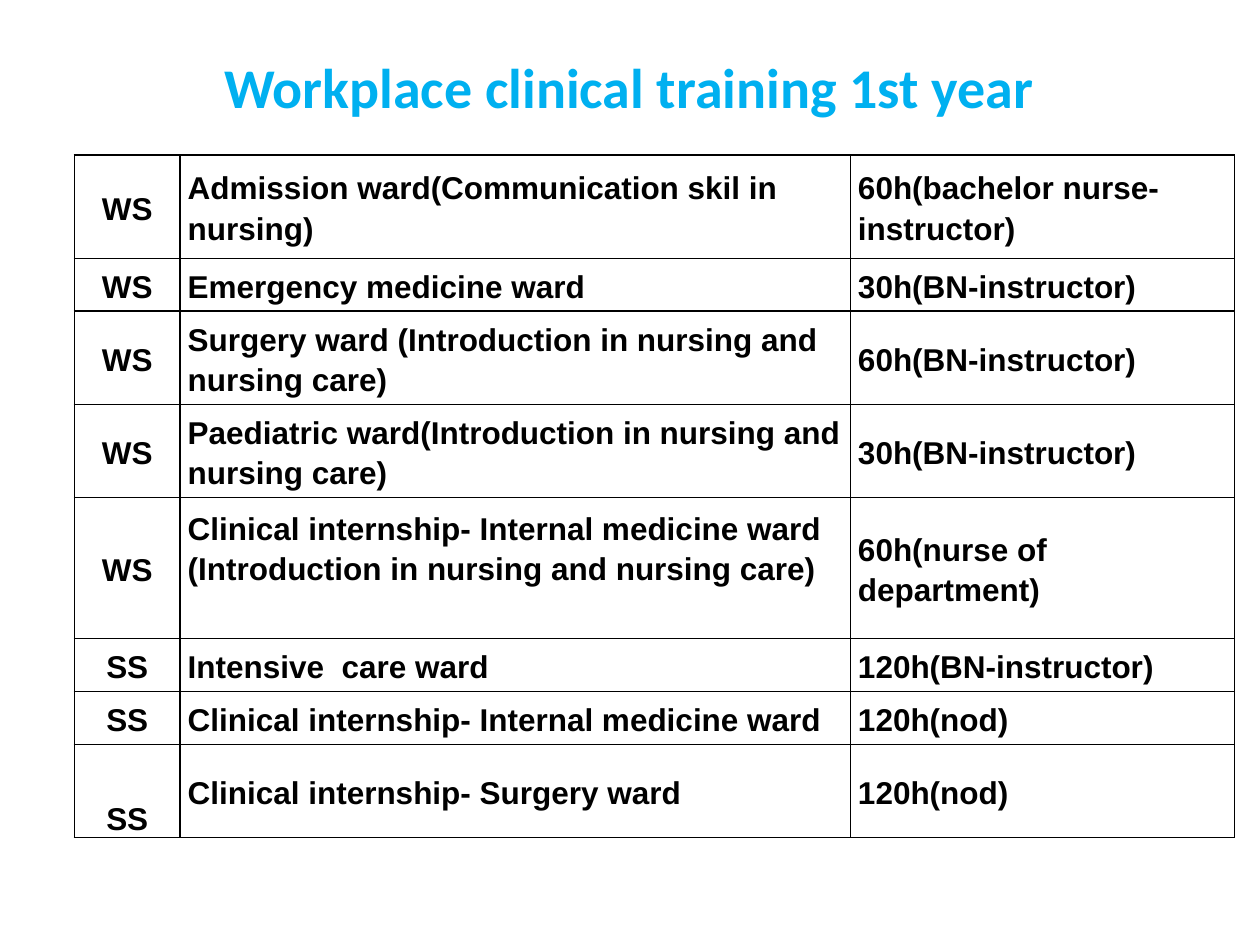
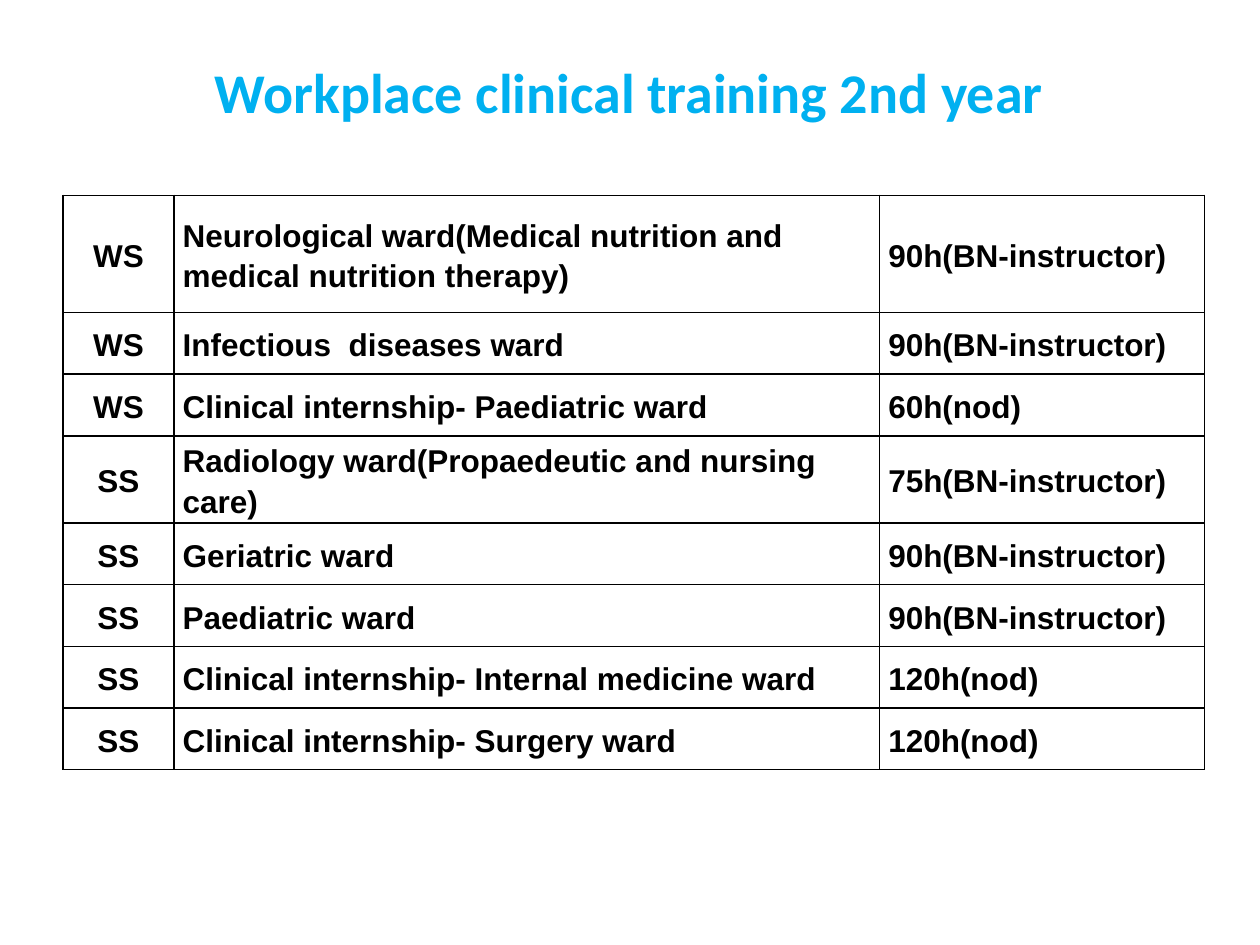
from pptx import Presentation
from pptx.dml.color import RGBColor
from pptx.enum.text import MSO_ANCHOR as Anchor, PP_ALIGN as Align
from pptx.oxml import parse_xml
from pptx.oxml.ns import nsdecls
from pptx.util import Inches, Pt

TITLE_BLUE = RGBColor(0x00, 0xB0, 0xF0)
BLACK = RGBColor(0x00, 0x00, 0x00)
SLIDE_WIDTH, SLIDE_HEIGHT = 10, 7.5
TITLE_LEFT, TITLE_TOP, TITLE_WIDTH = 0.5, 0.3, 8.99

YEARS = [
    {
        "title": "Workplace clinical training 1st year",
        "title_height": 0.77,
        "table_at": (0.59, 1.23),
        "columns": (0.84, 5.32, 3.05),
        "side_margin": 0.06,
        "rows": [
            (0.82, "WS", "Admission ward(Communication skil in nursing)", "60h(bachelor nurse-instructor)"),
            (0.42, "WS", "Emergency medicine ward", "30h(BN-instructor)"),
            (0.74, "WS", "Surgery ward (Introduction in nursing and nursing care)", "60h(BN-instructor)"),
            (0.74, "WS", "Paediatric ward(Introduction in nursing and nursing care)", "30h(BN-instructor)"),
            (1.12, "WS", "Clinical internship- Internal medicine ward (Introduction in nursing and nursing care)",
             "60h(nurse of department)"),
            (0.42, "SS", "Intensive  care ward", "120h(BN-instructor)"),
            (0.42, "SS", "Clinical internship- Internal medicine ward", "120h(nod)"),
            (0.74, "SS", "Clinical internship- Surgery ward", "120h(nod)"),
        ],
        "bottom_margins": {(4, 1): 0.34},
        "bottom_anchored": {(7, 0)},
    },
    {
        "title": "Workplace clinical training 2nd year",
        "title_height": 0.85,
        "table_at": (0.5, 1.55),
        "columns": (0.88, 5.6, 2.58),
        "side_margin": 0.07,
        "rows": [
            (0.93, "WS", "Neurological ward(Medical nutrition and medical nutrition therapy)", "90h(BN-instructor)"),
            (0.49, "WS", "Infectious  diseases ward", "90h(BN-instructor)"),
            (0.49, "WS", "Clinical internship- Paediatric ward", "60h(nod)"),
            (0.49, "SS", "Radiology ward(Propaedeutic and nursing care)", "75h(BN-instructor)"),
            (0.49, "SS", "Geriatric ward", "90h(BN-instructor)"),
            (0.49, "SS", "Paediatric ward", "90h(BN-instructor)"),
            (0.49, "SS", "Clinical internship- Internal medicine ward", "120h(nod)"),
            (0.49, "SS", "Clinical internship- Surgery ward", "120h(nod)"),
        ],
        "bottom_margins": {},
        "bottom_anchored": set(),
    },
]


def write(paragraph, text, font_name, size, color, align):
    paragraph.alignment = align
    run = paragraph.add_run()
    run.text = text
    font = run.font
    font.name, font.size, font.bold = font_name, Pt(size), True
    font.color.rgb = color


def add_title(slide, text, height):
    box = slide.shapes.add_textbox(*map(Inches, (TITLE_LEFT, TITLE_TOP, TITLE_WIDTH, height)))
    frame = box.text_frame
    frame.word_wrap = True
    frame.vertical_anchor = Anchor.MIDDLE
    write(frame.paragraphs[0], text, "Calibri", 32, TITLE_BLUE, Align.CENTER)


def add_borders(cell):
    properties = cell._tc.get_or_add_tcPr()
    for position, side in enumerate("LRTB"):
        properties.insert(position, parse_xml(
            f'<a:ln{side} {nsdecls("a")} w="{Pt(1)}"><a:solidFill>'
            f'<a:srgbClr val="{BLACK}"/></a:solidFill></a:ln{side}>'))


def fill_cell(cell, text, align, anchor, side_margin, bottom_margin):
    cell.fill.background()
    cell.margin_left = cell.margin_right = Inches(side_margin)
    cell.margin_top, cell.margin_bottom = 0, Inches(bottom_margin)
    cell.vertical_anchor = anchor
    paragraph = cell.text_frame.paragraphs[0]
    paragraph.line_spacing = 1.15
    write(paragraph, text, "Arial", 18, BLACK, align)
    add_borders(cell)


def add_training_table(slide, year):
    rows, widths = year["rows"], year["columns"]
    size = sum(widths), sum(row[0] for row in rows)
    table = slide.shapes.add_table(
        len(rows), len(widths), *map(Inches, year["table_at"] + size)).table
    table.first_row = table.horz_banding = False
    for column, width in zip(table.columns, widths):
        column.width = Inches(width)
    for row_index, (height, *texts) in enumerate(rows):
        table.rows[row_index].height = Inches(height)
        for column_index, text in enumerate(texts):
            place = row_index, column_index
            fill_cell(
                table.cell(*place), text,
                Align.LEFT if column_index else Align.CENTER,
                Anchor.BOTTOM if place in year["bottom_anchored"] else Anchor.MIDDLE,
                year["side_margin"], year["bottom_margins"].get(place, 0))


def main():
    presentation = Presentation()
    presentation.slide_width = Inches(SLIDE_WIDTH)
    presentation.slide_height = Inches(SLIDE_HEIGHT)
    for year in YEARS:
        slide = presentation.slides.add_slide(presentation.slide_layouts[6])
        add_title(slide, year["title"], year["title_height"])
        add_training_table(slide, year)
    presentation.save("out.pptx")


if __name__ == "__main__":
    main()
